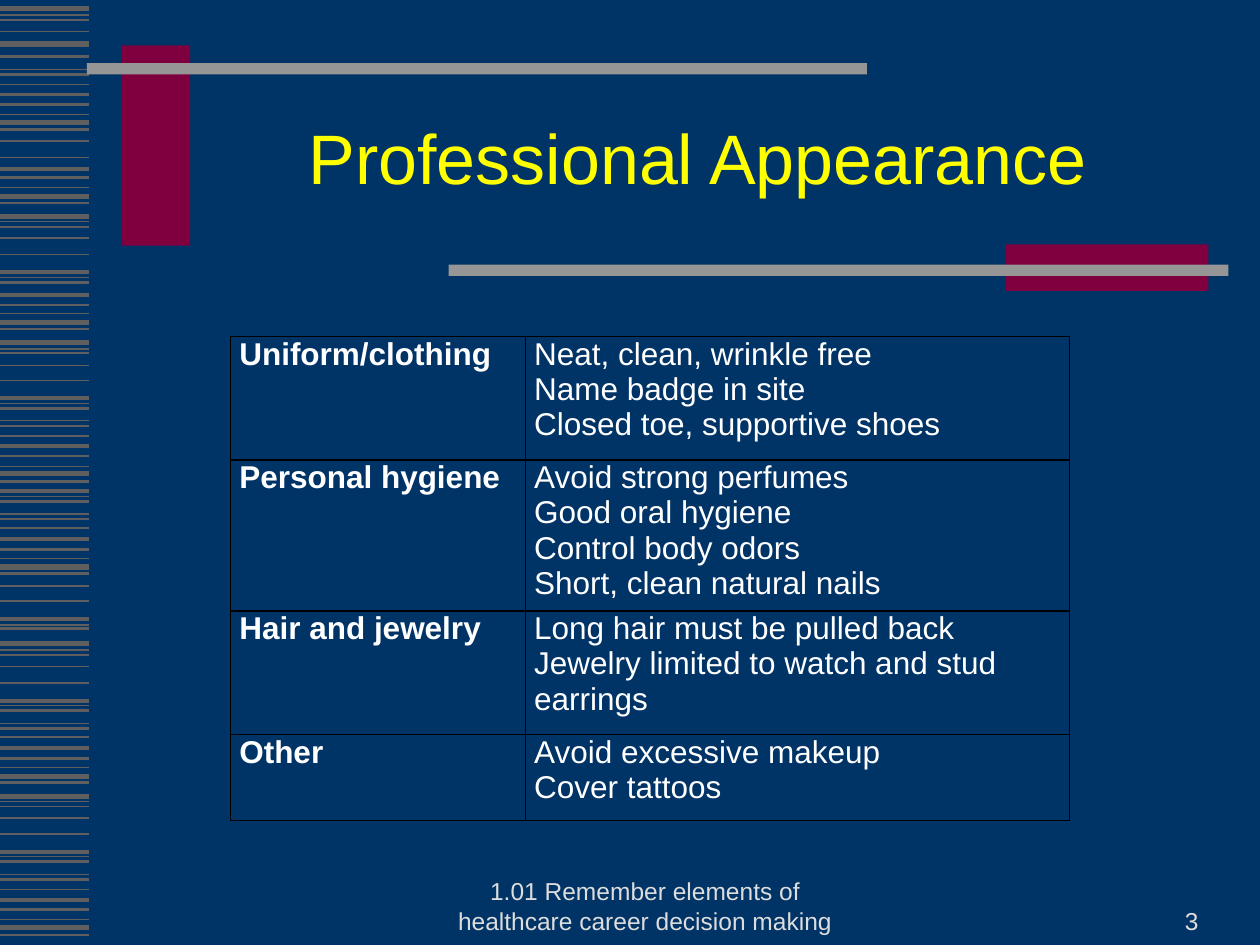
from lxml import etree
from pptx import Presentation
from pptx.dml.color import RGBColor
from pptx.enum import shapes, text
from pptx.oxml import ns
from pptx.util import Inches, Pt

NAVY = RGBColor(0x00, 0x33, 0x66)
STRIPE = RGBColor(0x5F, 0x5F, 0x5F)
MAROON = RGBColor(0x7E, 0x00, 0x3F)
GRAY = RGBColor(0x96, 0x96, 0x96)
YELLOW = RGBColor(0xFF, 0xFF, 0x00)
PALE = RGBColor(0xDD, 0xDD, 0xDD)
WHITE = RGBColor(0xFF, 0xFF, 0xFF)

TITLE = "Professional Appearance"
FOOTER = "1.01 Remember elements of healthcare career decision making"
PAGE = "3"
ROWS = [
    ("Uniform/clothing", ["Neat, clean, wrinkle free", "Name badge in site",
                          "Closed toe, supportive shoes"], 0.98),
    ("Personal hygiene", ["Avoid strong perfumes", "Good oral hygiene",
                          "Control body odors", "Short, clean natural nails"], 1.19),
    ("Hair and jewelry", ["Long hair must be pulled back",
                          "Jewelry limited to watch and stud earrings"], 0.98),
    ("Other", ["Avoid excessive makeup", "Cover tattoos"], 0.68),
]
COLUMNS = [2.34, 4.32]
STRIPE_WIDTH = 0.71
STRIPES = {
    3: [0.07, 0.35, 0.97, 1.56, 1.72, 2.56, 2.72, 3.76, 4.5, 5.11, 6.16, 6.32, 7.36],
    2.25: [0.75, 1.34, 2.16, 2.34, 3.16, 3.54, 3.9, 4.28, 4.91, 5.56, 5.94, 6.76, 7.14],
    1.5: [0.45, 0.59, 0.83, 1.03, 1.41, 1.61, 2.24, 2.42, 2.61, 3.24, 3.38, 3.62, 3.82,
          3.98, 4.12, 4.36, 4.55, 4.99, 5.64, 5.78, 6.02, 6.21, 6.84, 6.98, 7.22, 7.42],
    1: [0.16, 0.25, 0.67, 1.12, 1.25, 1.8, 1.89, 2.02, 2.8, 2.9, 3.02, 3.46, 4.19,
        4.65, 4.77, 5.2, 5.29, 5.42, 5.85, 6.4, 6.49, 6.62, 7.06],
    0.75: [0.12, 0.55, 0.91, 1.49, 1.76, 2.2, 2.49, 2.77, 3.2, 3.34, 3.7, 3.94, 4.08,
           4.43, 4.96, 5.16, 5.6, 5.74, 6.09, 6.36, 6.8, 6.94, 7.3],
}
BARS = [
    ((0.97, 0.36, 0.54, 1.59), MAROON),
    ((0.69, 0.5, 6.19, 0.09), GRAY),
    ((7.98, 1.94, 1.61, 0.37), MAROON),
    ((3.56, 2.1, 6.19, 0.09), GRAY),
]


def write(tf, lines, size=18, color=WHITE, bold=False, align=text.PP_ALIGN.LEFT,
          anchor=None, spacing=None):
    tf.word_wrap = True
    if anchor is not None:
        tf.vertical_anchor = anchor
    for i, line in enumerate(lines):
        p = tf.paragraphs[0] if i == 0 else tf.add_paragraph()
        p.alignment = align
        if spacing:
            p.line_spacing = spacing
        r = p.add_run()
        r.text = line
        r.font.name = "Arial"
        r.font.size = Pt(size)
        r.font.bold = bold
        r.font.color.rgb = color


def add_label(s, box, line, **fmt):
    write(s.shapes.add_textbox(*map(Inches, box)).text_frame, [line], **fmt)


def add_stripe(s, y, weight):
    line = s.shapes.add_connector(shapes.MSO_CONNECTOR.STRAIGHT, 0, Inches(y),
                                  Inches(STRIPE_WIDTH), Inches(y))
    line.line.color.rgb = STRIPE
    line.line.width = Pt(weight)
    etree.SubElement(line._element.spPr, ns.qn("a:effectLst"))


def add_bar(s, box, color):
    sp = s.shapes.add_shape(shapes.MSO_SHAPE.RECTANGLE, *map(Inches, box))
    sp.shadow.inherit = False
    sp.fill.solid()
    sp.fill.fore_color.rgb = color
    sp.line.fill.background()


def format_cell(cell):
    cell.margin_left = cell.margin_right = Inches(0.07)
    cell.margin_top = cell.margin_bottom = 0
    cell.fill.background()
    tcPr = cell._tc.get_or_add_tcPr()
    for i, side in enumerate(("lnL", "lnR", "lnT", "lnB")):
        ln = etree.Element(ns.qn("a:" + side), w=str(Pt(1)))
        fill = etree.SubElement(ln, ns.qn("a:solidFill"))
        etree.SubElement(fill, ns.qn("a:srgbClr"), val="000000")
        tcPr.insert(i, ln)


def add_grid(s):
    heights = [height for _, _, height in ROWS]
    table = s.shapes.add_table(len(ROWS), len(COLUMNS), Inches(1.83), Inches(2.67),
                               Inches(sum(COLUMNS)), Inches(sum(heights))).table
    table.first_row = table.horz_banding = False
    for column, width in zip(table.columns, COLUMNS):
        column.width = Inches(width)
    for row, (topic, rules, height) in zip(table.rows, ROWS):
        row.height = Inches(height)
        for cell, lines, bold in zip(row.cells, ([topic], rules), (True, False)):
            format_cell(cell)
            write(cell.text_frame, lines, bold=bold)


def main():
    prs = Presentation()
    prs.slide_width, prs.slide_height = Inches(10), Inches(7.5)
    s = prs.slides.add_slide(prs.slide_layouts[6])
    s.background.fill.solid()
    s.background.fill.fore_color.rgb = NAVY
    for weight, positions in STRIPES.items():
        for y in positions:
            add_stripe(s, y, weight)
    for box, color in BARS:
        add_bar(s, box, color)
    add_label(s, (1.5, 0.67, 8.07, 1.25), TITLE, size=40, color=YELLOW, spacing=0.85,
              align=text.PP_ALIGN.CENTER, anchor=text.MSO_ANCHOR.MIDDLE)
    add_label(s, (3.43, 6.97, 3.38, 0.5), FOOTER, size=14, color=PALE,
              align=text.PP_ALIGN.CENTER, anchor=text.MSO_ANCHOR.BOTTOM)
    add_label(s, (7.21, 6.97, 2.4, 0.5), PAGE, size=14, color=PALE,
              align=text.PP_ALIGN.RIGHT, anchor=text.MSO_ANCHOR.BOTTOM)
    add_grid(s)
    prs.save("out.pptx")


if __name__ == "__main__":
    main()
